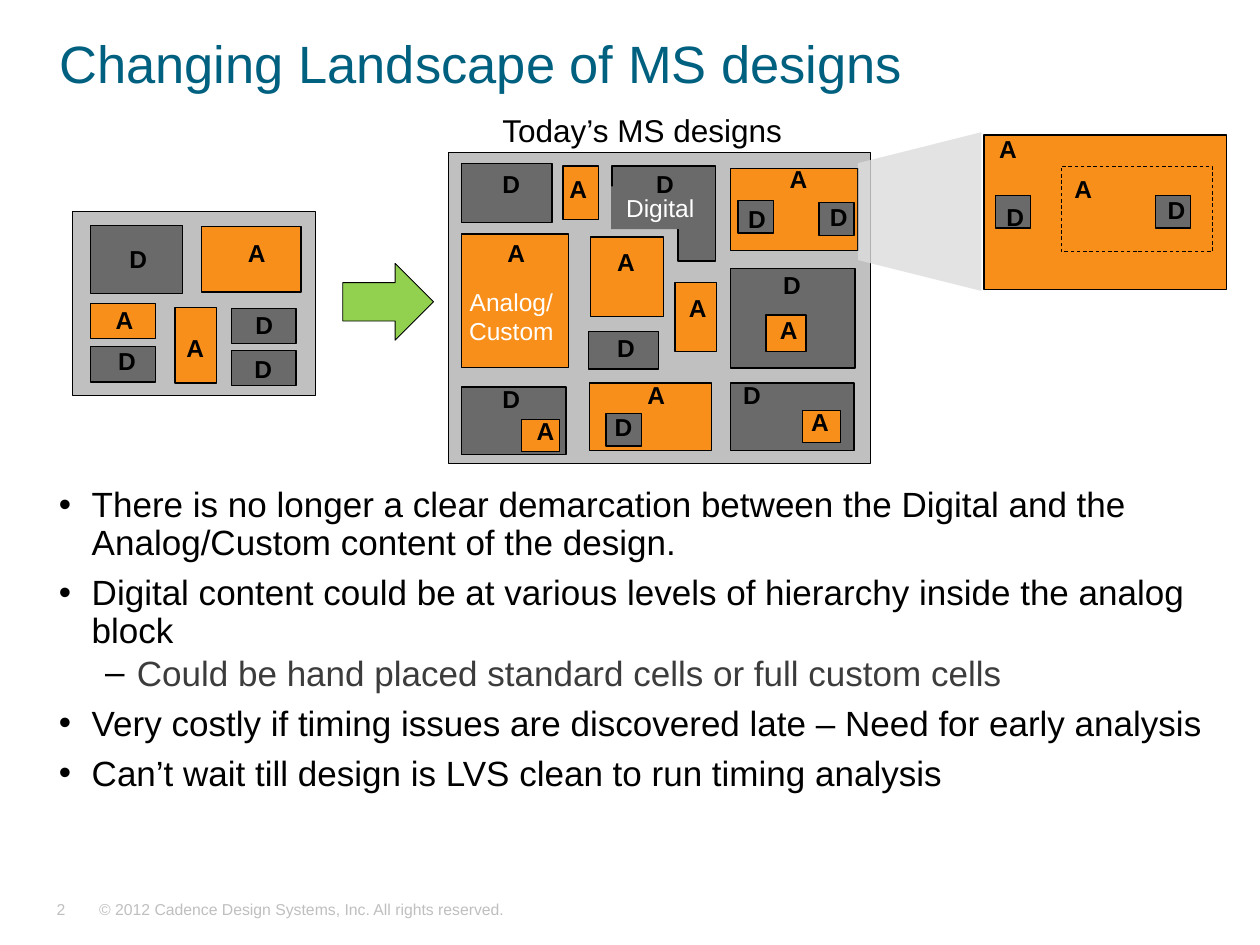
from lxml.etree import SubElement
from pptx import Presentation
from pptx.dml.color import RGBColor
from pptx.enum.dml import MSO_LINE
from pptx.enum.shapes import MSO_SHAPE
from pptx.enum.text import MSO_ANCHOR, PP_ALIGN
from pptx.oxml.ns import qn
from pptx.util import Cm, Pt

COLORS = {
    "title": "006080", "black": "000000", "white": "FFFFFF", "sub": "3C3C3C",
    "footer": "BFBFBF", "die": "C0C0C0", "D": "6A6A6A", "A": "F98F1B",
    "arrow": "92D050", "zoom": "DDDDDD",
}

prs = Presentation()
prs.slide_width, prs.slide_height = Cm(25.4), Cm(19.05)
s = prs.slides.add_slide(prs.slide_layouts[5])


def style(sp, fill, line_width):
    """Set fill and black outline; None means no fill or no outline."""
    sp.shadow.inherit = False
    if fill:
        sp.fill.solid()
        sp.fill.fore_color.rgb = RGBColor.from_string(COLORS[fill])
    else:
        sp.fill.background()
    if line_width:
        sp.line.color.rgb = RGBColor.from_string(COLORS["black"])
        sp.line.width = Pt(line_width)
    else:
        sp.line.fill.background()


def write(sp, text, size, color, bold=False, align=PP_ALIGN.LEFT, wrap=True):
    tf = sp.text_frame
    tf.word_wrap = wrap
    tf.text = text
    for p in tf.paragraphs:
        p.alignment = align
        for r in p.runs:
            r.font.name = "Arial"
            r.font.size = Pt(size)
            r.font.bold = bold
            r.font.color.rgb = RGBColor.from_string(COLORS[color])


# Title
title = s.shapes.title
title.left, title.top, title.width, title.height = Cm(0.94), Cm(0.58), Cm(23.57), Cm(1.55)
write(title, "Changing Landscape of MS designs", 30, "title")
title.text_frame.vertical_anchor = MSO_ANCHOR.MIDDLE
title.text_frame.paragraphs[0].line_spacing = 0.85

# Bullets
bullets = [
    (0, "There is no longer a clear demarcation between the Digital and the "
        "Analog/Custom content of the design."),
    (0, "Digital content could be at various levels of hierarchy inside the analog block"),
    (1, "Could be hand placed standard cells or full custom cells"),
    (0, "Very costly if timing issues are discovered late – Need for early analysis"),
    (0, "Can’t wait till design is LVS clean to run timing analysis"),
]
body = s.shapes.add_textbox(Cm(0.94), Cm(9.7), Cm(24.16), Cm(7.32))
write(body, "\n".join(text for _, text in bullets), 20, "black")
for i, (p, (level, _)) in enumerate(zip(body.text_frame.paragraphs, bullets)):
    p.level = level
    p.line_spacing = 0.9
    p.space_before = Pt(4 if i and level == 0 else 0)
    p.space_after = Pt(3)
    margin, hang, mark = [(0.66, 0.66, "•"), (1.57, 0.64, "–")][level]
    pPr = p._p.get_or_add_pPr()
    pPr.set("marL", str(Cm(margin)))
    pPr.set("indent", str(-Cm(hang)))
    bu_color = SubElement(pPr, qn("a:buClr"))
    SubElement(bu_color, qn("a:srgbClr"), val=COLORS["black"])
    SubElement(pPr, qn("a:buFont"), typeface="Arial")
    SubElement(pPr, qn("a:buChar"), char=mark)
    if level:
        p.runs[0].font.color.rgb = RGBColor.from_string(COLORS["sub"])

# Chip outlines: today's design, then the earlier one
for x, y, w, h in [(9.04, 3.07, 8.51, 6.27), (1.47, 4.27, 4.9, 3.71)]:
    die = s.shapes.add_shape(MSO_SHAPE.RECTANGLE, Cm(x), Cm(y), Cm(w), Cm(h))
    style(die, "die", 0.5)

# L-shaped digital block
corners = [(14.43, 3.35), (12.34, 3.35), (12.34, 4.42), (13.67, 4.42), (13.67, 5.26)]
builder = s.shapes.build_freeform(Cm(14.43), Cm(5.26))
builder.add_line_segments([(Cm(x), Cm(y)) for x, y in corners])
style(builder.convert_to_shape(), "D", 0.75)
digital = s.shapes.add_shape(MSO_SHAPE.RECTANGLE, Cm(12.32), Cm(3.76), Cm(1.98), Cm(0.86))
style(digital, "D", None)
write(digital, "Digital", 14, "white", align=PP_ALIGN.CENTER)

# Analog (A) and digital (D) blocks: x, y, width, height, label x, label y
blocks = [
    # today's design
    ("D", 9.3, 3.3, 1.83, 1.19, 9.88, 3.28),
    ("A", 9.3, 4.72, 2.16, 2.69, 9.98, 4.67),
    ("A", 11.91, 4.78, 1.47, 1.6, 12.19, 4.85),
    ("D", 14.73, 5.41, 2.51, 2.01, 15.54, 5.31),
    ("A", 11.35, 3.35, 0.71, 1.07, 11.23, 3.38),
    ("A", 14.73, 3.4, 2.57, 1.65, 15.67, 3.18),
    ("D", 11.86, 6.68, 1.42, 0.76, 12.19, 6.58),
    ("A", 13.61, 5.69, 0.84, 1.4, 13.64, 5.79),
    ("D", 9.3, 7.8, 2.11, 1.37, 9.88, 7.62),
    ("D", 14.73, 7.72, 2.49, 1.37, 14.73, 7.54),
    ("A", 11.89, 7.72, 2.46, 1.37, 12.8, 7.54),
    # nested in the blocks above
    ("D", 14.88, 4.04, 0.71, 0.66, 14.83, 3.99),
    ("D", 16.51, 4.09, 0.71, 0.66, 16.48, 3.94),
    ("A", 15.44, 6.35, 0.81, 0.74, 15.47, 6.22),
    ("A", 16.18, 8.28, 0.76, 0.64, 16.1, 8.08),
    ("D", 12.22, 8.33, 0.71, 0.66, 12.14, 8.18),
    ("A", 10.52, 8.46, 0.76, 0.64, 10.57, 8.26),
    # enlarged analog block
    ("A", 19.84, 2.72, 4.88, 3.12, 19.89, 2.57),
    ("D", 20.07, 3.94, 0.71, 0.66, 20.04, 3.94),
    ("D", 23.29, 3.94, 0.71, 0.66, 23.29, 3.81),
    # earlier design
    ("D", 1.83, 4.55, 1.85, 1.37, 2.36, 4.8),
    ("A", 4.06, 4.57, 2.01, 1.32, 4.75, 4.67),
    ("A", 1.83, 6.12, 1.3, 0.71, 2.08, 6.02),
    ("D", 1.83, 6.99, 1.3, 0.71, 2.13, 6.86),
    ("A", 3.53, 6.2, 0.84, 1.52, 3.51, 6.58),
    ("D", 4.67, 6.22, 1.3, 0.71, 4.9, 6.12),
    ("D", 4.67, 7.06, 1.3, 0.71, 4.88, 7.01),
]
for kind, x, y, w, h, *_ in blocks:
    block = s.shapes.add_shape(MSO_SHAPE.RECTANGLE, Cm(x), Cm(y), Cm(w), Cm(h))
    style(block, kind, 0.75)

sub_block = s.shapes.add_shape(MSO_SHAPE.RECTANGLE, Cm(21.39), Cm(3.35), Cm(3.05), Cm(1.73))
style(sub_block, None, 0.5)
sub_block.line.dash_style = MSO_LINE.DASH

# Zoom wedge and transition arrow
wedge = s.shapes.add_shape(MSO_SHAPE.TRAPEZOID, Cm(16.94), Cm(3.02), Cm(3.2), Cm(2.49))
wedge.rotation = 270
style(wedge, "zoom", None)
wedge_color = wedge._element.spPr.find(qn("a:solidFill"))[0]
SubElement(wedge_color, qn("a:alpha"), val="80000")

arrow = s.shapes.add_shape(MSO_SHAPE.RIGHT_ARROW, Cm(6.91), Cm(5.31), Cm(1.83), Cm(1.55))
style(arrow, "arrow", 0.5)

# Block letters, with those of the L-shaped and the dashed block
labels = [(kind, x, y) for kind, *_, x, y in blocks]
for kind, x, y in labels + [("D", 12.98, 3.28), ("A", 21.41, 3.38)]:
    letter = s.shapes.add_textbox(Cm(x), Cm(y), Cm(0.74), Cm(0.86))
    write(letter, kind, 14, "black", bold=True)

# Captions and footer
captions = [
    ("Analog/\nCustom", 9.19, 5.66, 2.24, 1.45, 14, "white", PP_ALIGN.CENTER),
    ("Today’s MS designs", 9.88, 2.11, 6.2, 1.02, 18, "black", PP_ALIGN.LEFT),
    ("2", 0.89, 18.01, 0.91, 0.64, 9, "footer", PP_ALIGN.LEFT),
    ("© 2012 Cadence Design Systems, Inc. All rights reserved.",
     1.75, 18.01, 8.76, 0.64, 9, "footer", PP_ALIGN.LEFT),
]
for text, x, y, w, h, size, color, align in captions:
    caption = s.shapes.add_textbox(Cm(x), Cm(y), Cm(w), Cm(h))
    write(caption, text, size, color, align=align, wrap=False)

prs.save("out.pptx")
